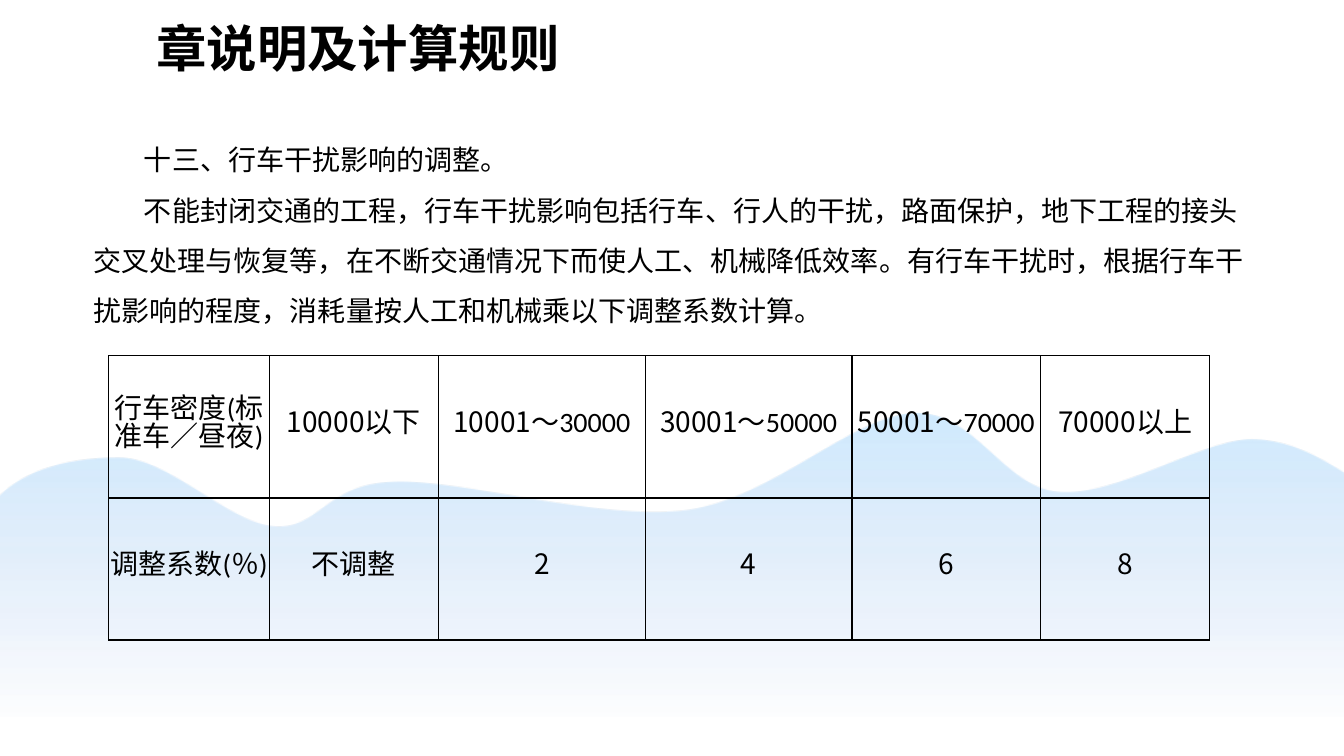
from typing import NamedTuple

from lxml.etree import SubElement
from pptx import Presentation
from pptx.dml.color import RGBColor
from pptx.enum.text import MSO_ANCHOR as Anchor, MSO_AUTO_SIZE as AutoSize, PP_ALIGN as Align
from pptx.oxml.ns import qn
from pptx.util import Emu, Pt

PX = 9144  # 100 px to the inch
BLACK = RGBColor(0x00, 0x00, 0x00)
SKY = RGBColor(0x2C, 0xA2, 0xFA)
DEEP_BLUE = RGBColor(0x06, 0x4E, 0xC4)
NO_MARGINS = {"margin_left": 0, "margin_top": 0, "margin_right": 0, "margin_bottom": 0}
Point = tuple[int, int]


class Box(NamedTuple):
    left: int
    top: int
    width: int
    height: int


class Curve(NamedTuple):
    control_1: Point
    control_2: Point
    end: Point


class Entry(NamedTuple):
    number: str
    words: str


class Fade(NamedTuple):
    position: float
    colour: RGBColor
    opacity: int


TITLE_BOX = Box(145, 12, 426, 71)
RULES_BOX = Box(83, 120, 1173, 515)
TABLE_BOX = Box(108, 353, 1092, 282)
WAVE_BOX = Box(-80, 410, 1472, 428)

WAVE_START = (-23, 526)
WAVE = [
    Curve((0, 467), (67, 454), (117, 454)),
    Curve((166, 453), (226, 518), (271, 522)),
    Curve((317, 526), (322, 480), (390, 478)),
    Curve((458, 475), (595, 517), (681, 506)),
    Curve((767, 494), (844, 413), (906, 410)),
    Curve((967, 407), (995, 484), (1050, 488)),
    Curve((1105, 493), (1188, 439), (1237, 436)),
    Curve((1285, 434), (1325, 465), (1343, 475)),
    Curve((1361, 485), (1344, 442), (1343, 498)),
    Curve((1343, 553), (1456, 752), (1339, 807)),
    Curve((1223, 862), (871, 826), (643, 826)),
    Curve((416, 826), (85, 857), (-26, 807)),
    Curve((-137, 757), (-47, 585), WAVE_START),
]
WAVE_FADES = [Fade(0, SKY, 22), Fade(0.71, DEEP_BLUE, 0)]

RULES = [
    "十三、行车干扰影响的调整。",
    "不能封闭交通的工程，行车干扰影响包括行车、行人的干扰，路面保护，地下工程的接头交叉处理与恢复等，"
    "在不断交通情况下而使人工、机械降低效率。有行车干扰时，根据行车干扰影响的程度，"
    "消耗量按人工和机械乘以下调整系数计算。",
]

COLUMN_WIDTHS = [159, 168, 205, 205, 187, 168]
ROW_HEIGHT = 141
COEFFICIENTS = [
    [Entry("", "行车密度(标准车／昼夜)"), Entry("10000", "以下"), Entry("10001", "～30000"),
     Entry("30001", "～50000"), Entry("50001", "～70000"), Entry("70000", "以上")],
    [Entry("", "调整系数(％)"), Entry("", "不调整"), Entry("2", ""),
     Entry("4", ""), Entry("6", ""), Entry("8", "")],
]


def emu(box: Box) -> list[Emu]:
    return [Emu(length * PX) for length in box]


def apply(target, formats: dict) -> None:
    for name, value in formats.items():
        setattr(target, name, value)


def place(shape, box: Box) -> None:
    apply(shape, dict(zip(Box._fields, emu(box))))


def add_run(paragraph, text: str, font: str, size: int = 20, bold: bool = False) -> None:
    run = paragraph.add_run()
    run.text = text
    apply(run.font, {"name": font, "size": Pt(size), "bold": bold})
    run.font.color.rgb = BLACK


def bend_outline(shape, box: Box, start: Point, curves: list[Curve]) -> None:
    """Turn the straight segments of a freeform into cubic curves."""
    place(shape, box)
    outline = next(shape._element.iter(qn("a:path")))
    for side, length in (("w", box.width), ("h", box.height)):
        outline.set(side, str(length))
    for step in list(outline):
        outline.remove(step)
    for tag, points in (("a:moveTo", (start,)), *(("a:cubicBezTo", curve) for curve in curves)):
        step = SubElement(outline, qn(tag))
        for x, y in points:
            SubElement(step, qn("a:pt"), x=str(x - box.left), y=str(y - box.top))
    SubElement(outline, qn("a:close"))


def add_wave(slide) -> None:
    builder = slide.shapes.build_freeform(*WAVE_START, scale=PX)
    builder.add_line_segments([curve.end for curve in WAVE], close=True)
    wave = builder.convert_to_shape()
    bend_outline(wave, WAVE_BOX, WAVE_START, WAVE)
    wave.shadow.inherit = False
    wave.line.fill.background()
    wave.fill.gradient()
    wave.fill.gradient_angle = 270
    for stop, fade in zip(wave.fill.gradient_stops, WAVE_FADES):
        stop.position = fade.position
        stop.color.rgb = fade.colour
    for colour, fade in zip(wave._element.spPr.iter(qn("a:srgbClr")), WAVE_FADES):
        SubElement(colour, qn("a:alpha"), val=str(fade.opacity * 1000))


def add_title(slide) -> None:
    title = slide.shapes.title
    place(title, TITLE_BOX)
    apply(title.text_frame, {"word_wrap": False, "auto_size": AutoSize.SHAPE_TO_FIT_TEXT,
                             "vertical_anchor": Anchor.TOP})
    heading = title.text_frame.paragraphs[0]
    heading.alignment = Align.LEFT
    add_run(heading, "章说明及计算规则", "Arial", 36, True)


def add_rules(slide) -> None:
    frame = slide.shapes.add_textbox(*emu(RULES_BOX)).text_frame
    frame.word_wrap = True
    for index, rule in enumerate(RULES):
        paragraph = frame.add_paragraph() if index else frame.paragraphs[0]
        paragraph.line_spacing = 1.5
        paragraph._p.get_or_add_pPr().set("indent", str(50 * PX))
        add_run(paragraph, rule, "Calibri")


def add_borders(cell) -> None:
    properties = cell._tc.get_or_add_tcPr()
    for index, side in enumerate(("a:lnL", "a:lnR", "a:lnT", "a:lnB")):
        border = SubElement(properties, qn(side), w=str(Pt(1)))
        SubElement(SubElement(border, qn("a:solidFill")), qn("a:srgbClr"), val=str(BLACK))
        properties.insert(index, border)


def fill_cell(cell, entry: Entry) -> None:
    apply(cell, {**NO_MARGINS, "vertical_anchor": Anchor.MIDDLE})
    cell.fill.background()
    add_borders(cell)
    paragraph = cell.text_frame.paragraphs[0]
    apply(paragraph, {"alignment": Align.CENTER, "line_spacing": Pt(20)})
    for text, font in zip(entry, ("Noto Sans CJK SC", "Calibri")):
        if text:
            add_run(paragraph, text, font)


def add_coefficients(slide) -> None:
    table = slide.shapes.add_table(len(COEFFICIENTS), len(COLUMN_WIDTHS), *emu(TABLE_BOX)).table
    apply(table, {"first_row": False, "horz_banding": False})
    for column, width in zip(table.columns, COLUMN_WIDTHS):
        column.width = Emu(width * PX)
    for row, entries in zip(table.rows, COEFFICIENTS):
        row.height = Emu(ROW_HEIGHT * PX)
        for cell, entry in zip(row.cells, entries):
            fill_cell(cell, entry)


def main() -> None:
    deck = Presentation()
    apply(deck, {"slide_width": Emu(1333 * PX), "slide_height": Emu(750 * PX)})
    slide = deck.slides.add_slide(deck.slide_layouts[5])
    # Background wave
    add_wave(slide)
    # Heading and rule text
    add_title(slide)
    add_rules(slide)
    # Adjustment coefficients by traffic density
    add_coefficients(slide)
    deck.save("out.pptx")


if __name__ == "__main__":
    main()
